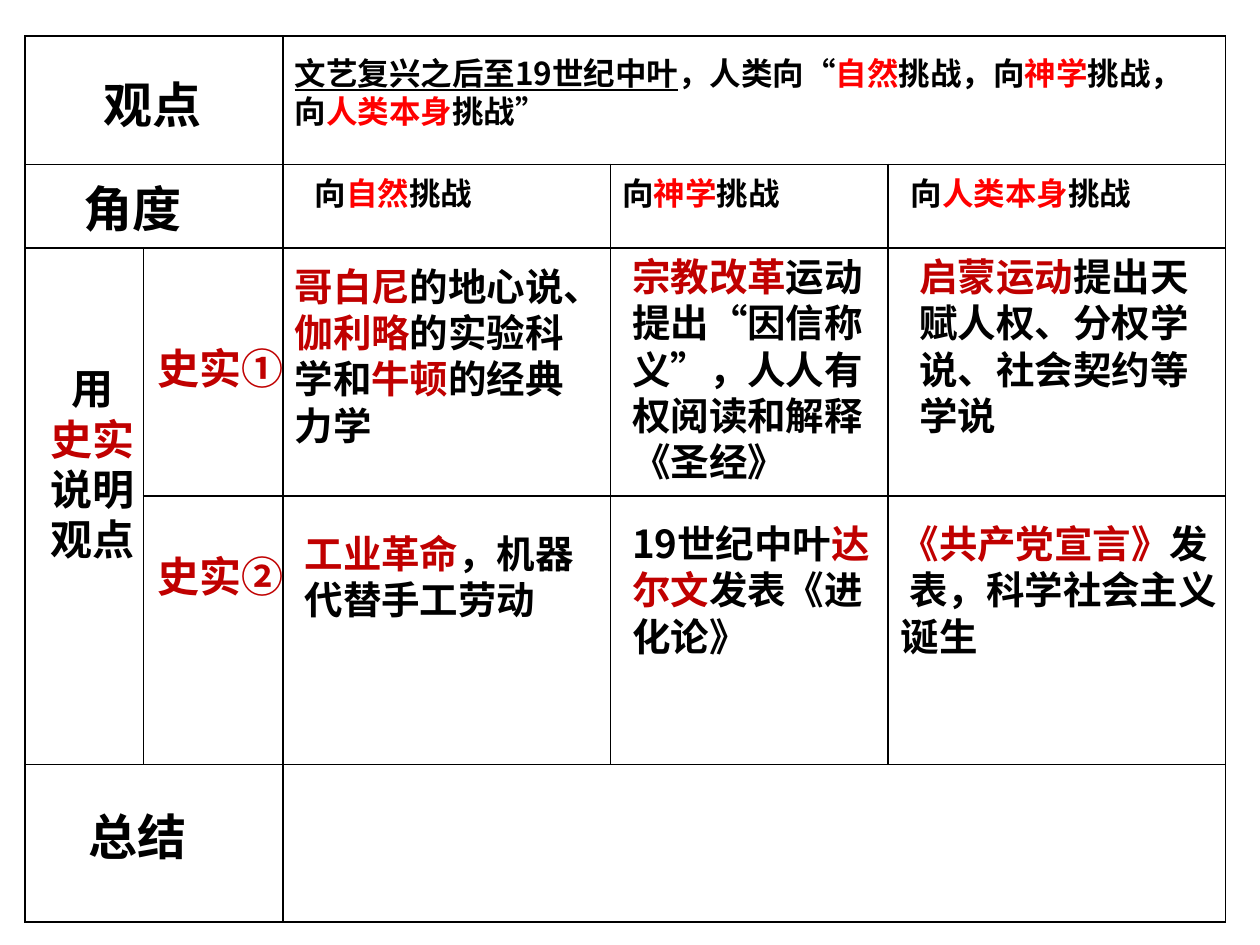
from dataclasses import dataclass

from lxml import etree
from pptx import Presentation
from pptx.dml.color import RGBColor
from pptx.enum import lang, text
from pptx.oxml import ns
from pptx.util import Pt

FONT = "Noto Sans CJK SC"
BLACK, RED, DARK = "000000", "FF0000", "C00000"
LEAD = 1.2  # line pitch as a multiple of the text size


@dataclass
class Run:
    words: str
    tint: str = BLACK
    line: bool = False


@dataclass
class Note:
    left: float
    top: float
    width: float
    height: float
    size: float
    paras: list[list[Run]]
    mid: bool = False
    wrap: bool = True
    indent: float = 0  # first-line indent of the last paragraph


def color(code: str) -> RGBColor:
    return RGBColor.from_string(code)


def add_run(para, run: Run, size: float) -> None:
    part = para.add_run()
    part.text = run.words
    font = part.font
    font.name, font.size, font.bold = FONT, Pt(size), True
    font.underline = run.line
    font.color.rgb = color(run.tint)
    font.language_id = lang.MSO_LANGUAGE_ID.SIMPLIFIED_CHINESE
    east = etree.SubElement(part._r.get_or_add_rPr(), ns.qn("a:ea"))
    east.set("typeface", FONT)


def add_note(slide, note: Note) -> None:
    box = slide.shapes.add_textbox(
        Pt(note.left), Pt(note.top), Pt(note.width), Pt(note.height))
    frame = box.text_frame
    frame.word_wrap = note.wrap
    frame.margin_top = Pt(5)
    for i, runs in enumerate(note.paras):
        para = frame.add_paragraph() if i else frame.paragraphs[0]
        para.line_spacing = Pt(note.size * LEAD)
        if note.mid:
            para.alignment = text.PP_ALIGN.CENTER
        for run in runs:
            add_run(para, run, note.size)
    if note.indent:
        para._p.get_or_add_pPr().set("indent", str(Pt(note.indent)))


def add_edges(cell) -> None:
    cell.fill.background()
    props = cell._tc.get_or_add_tcPr()
    for i, side in enumerate(("lnL", "lnR", "lnT", "lnB")):
        edge = etree.Element(ns.qn("a:" + side), w=str(Pt(1)))
        fill = etree.SubElement(edge, ns.qn("a:solidFill"))
        etree.SubElement(fill, ns.qn("a:srgbClr"), val=BLACK)
        props.insert(i, edge)


def add_grid(slide, cols: list[float], rows: list[float]):
    grid = slide.shapes.add_table(
        len(rows), len(cols), Pt(14.2), Pt(20.5),
        Pt(sum(cols)), Pt(sum(rows))).table
    grid.first_row = grid.horz_banding = False
    for col, width in zip(grid.columns, cols):
        col.width = Pt(width)
    for row, height in zip(grid.rows, rows):
        row.height = Pt(height)
    for cell in grid.iter_cells():
        add_edges(cell)
    for a, b in (((0, 0), (0, 1)), ((0, 2), (0, 4)), ((1, 0), (1, 1)),
                 ((2, 0), (3, 0)), ((4, 0), (4, 1)), ((4, 2), (4, 4))):
        grid.cell(*a).merge(grid.cell(*b))
    return grid


def angle(left: float, width: float, theme: str) -> Note:
    runs = [Run("向"), Run(theme, RED), Run("挑战")]
    return Note(left, 94.3, width, 36.7, 18, [runs])


def label(left: float, top: float, width: float, words: str) -> Note:
    return Note(left, top, width, 41, 28, [[Run(words)]], True, False)


def fact(top: float, words: str) -> Note:
    return Note(82, top, 88, 36.7, 24, [[Run(words, DARK)]], True, False)


NOTES = [
    # Row labels
    label(19.4, 37.4, 136, "观点"),
    label(39.5, 455.8, 78, "总结"),
    Note(19.4, 202.3, 67, 124, 24,
         [[Run("用")], [Run("史实", DARK)], [Run("说明观点")]], True),
    fact(190.8, "史实①"),
    fact(309.6, "史实②"),
    # Claim
    Note(161.3, 25.9, 538.6, 65.5, 18, [[
        Run("文艺复兴之后至19世纪中叶", line=True), Run("，人类向“"),
        Run("自然", RED), Run("挑战，向"), Run("神学", RED),
        Run("挑战，向"), Run("人类本身", RED), Run("挑战”")]]),
    # Angles
    angle(172.8, 164, "自然"),
    angle(348.5, 153, "神学"),
    angle(513.4, 185, "人类本身"),
    # First facts
    Note(161.3, 145.4, 181.4, 114, 22, [[
        Run("哥白尼", DARK), Run("的地心说、"), Run("伽利略", DARK),
        Run("的实验科学和"), Run("牛顿", DARK), Run("的经典力学")]]),
    Note(354.2, 139.7, 158.4, 139, 22, [[
        Run("宗教改革", DARK),
        Run("运动提出“因信称义”，人人有权阅读和解释《圣经》")]]),
    Note(518.4, 139.7, 187.2, 114, 22, [[
        Run("启蒙运动", DARK),
        Run("提出天赋人权、分权学说、社会契约等学说")]]),
    # Second facts
    Note(167, 298, 181.4, 60.5, 22, [[
        Run("工业革命", DARK), Run("，机器代替手工劳动")]]),
    Note(354.2, 292.3, 158.4, 87, 22, [[
        Run("19世纪中叶"), Run("达尔文", DARK), Run("发表《进化论》")]]),
    Note(507.6, 292.3, 198.7, 87, 22, [
        [Run("《共产党宣言》", DARK), Run("发")],
        [Run("表，科学社会主义诞生")]], indent=5),
]


def main() -> None:
    deck = Presentation()
    deck.slide_width, deck.slide_height = Pt(720), Pt(540)
    slide = deck.slides.add_slide(deck.slide_layouts[6])

    # Table frame with the one label that sits in its cell
    grid = add_grid(slide, [67.7, 79.9, 187.2, 158.4, 193],
                    [73.5, 45.4, 141.8, 153.4, 90])
    cell = grid.cell(1, 0)
    cell.margin_left = Pt(33.5)
    add_run(cell.text_frame.paragraphs[0], Run("角度"), 28)

    # Texts laid over the table
    for note in NOTES:
        add_note(slide, note)
    deck.save("out.pptx")


if __name__ == "__main__":
    main()
